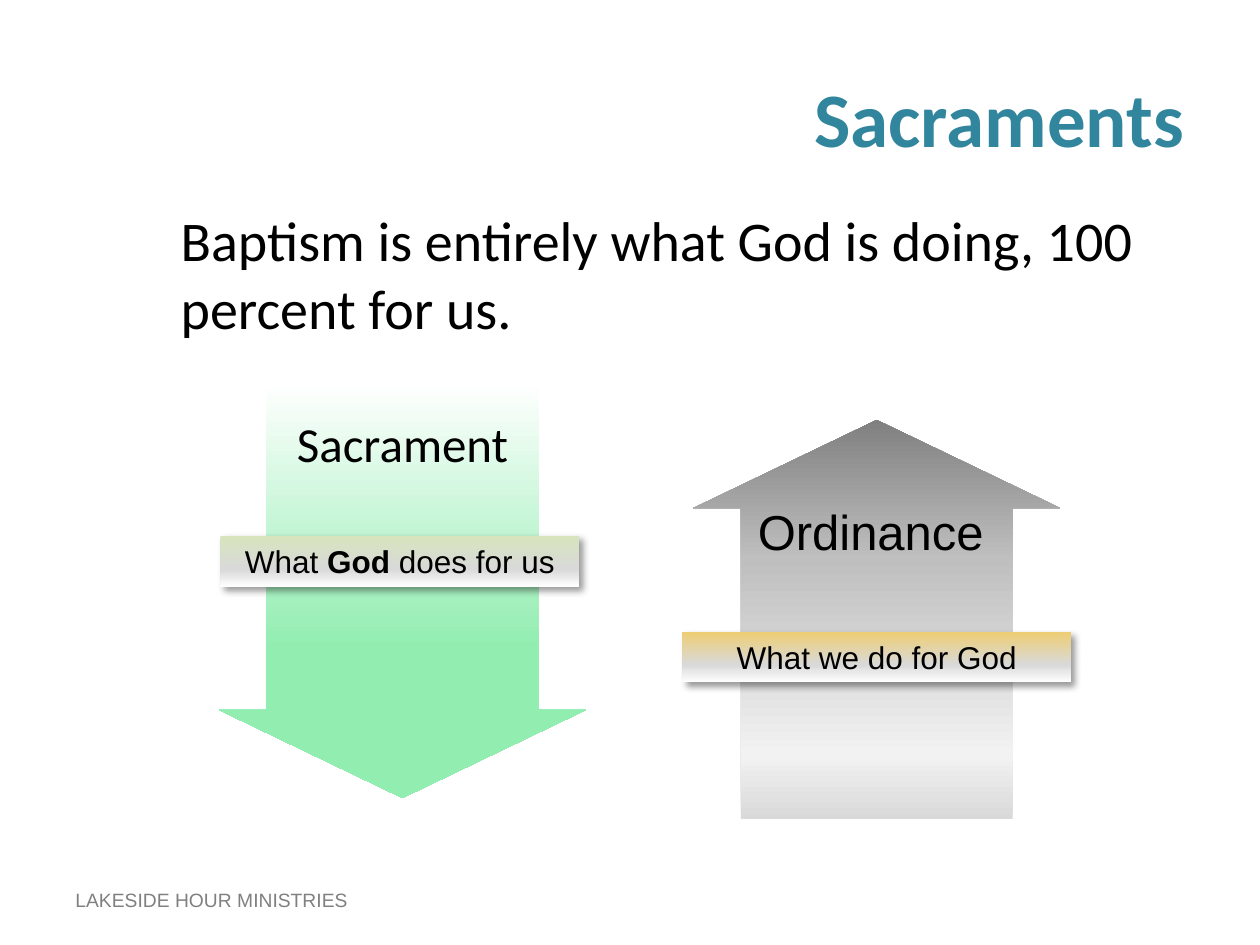
from dataclasses import dataclass

from lxml import etree
from pptx import Presentation
from pptx import util as u
from pptx.dml.color import RGBColor
from pptx.enum import shapes, text
from pptx.oxml.ns import qn


@dataclass(frozen=True)
class Theme:
    """Colours, fonts and type sizes of the slide."""

    heading_font: str = "Calibri"
    label_font: str = "Arial"
    title_size: float = 44
    body_size: float = 32
    heading_size: float = 28
    bar_size: float = 18
    footer_size: float = 11
    teal: str = "31859C"
    black: str = "000000"
    gray: str = "808080"
    white: str = "FFFFFF"
    sacrament_arrow: tuple = ((0, "11D9B8"), (1, "FFFFFF"), (65, "91EDB0"))
    ordinance_arrow: tuple = ((0, "D9D9D9"), (16, "F2F2F2"), (65, "BFBFBF"), (100, "808080"))
    sacrament_bar: tuple = ((0, "D7E4BD"), (65, "D9D9D9"), (100, "FFFFFF"))
    ordinance_bar: tuple = ((0, "EECE72"), (65, "D9D9D9"), (100, "FFFFFF"))


class SlideBuilder:
    """Adds styled elements to the current slide."""

    def __init__(self, slide, theme):
        """Keep the slide and its theme."""
        self.slide = slide
        self.theme = theme

    def place(self, shape, box):
        """Move and size a shape with a box given in points."""
        shape.left, shape.top, shape.width, shape.height = (u.Pt(value) for value in box)

    def set_text(self, shape, parts, font, size, color, align=text.PP_ALIGN.LEFT):
        """Set one paragraph of (words, bold) parts."""
        shape.text_frame.word_wrap = True
        paragraph = shape.text_frame.paragraphs[0]
        paragraph.alignment = align
        paragraph.space_before = u.Pt(0)
        for words, bold in parts:
            run = paragraph.add_run()
            run.text = words
            run.font.name = font
            run.font.size = u.Pt(size)
            run.font.bold = bold
            run.font.color.rgb = RGBColor.from_string(color)

    def title(self, words, box):
        """Fill the title placeholder."""
        shape = self.slide.shapes.title
        self.place(shape, box)
        self.set_text(shape, [(words, True)], self.theme.heading_font, self.theme.title_size,
                      self.theme.teal, text.PP_ALIGN.RIGHT)

    def body(self, words, box):
        """Fill the body placeholder with an unbulleted paragraph."""
        shape = self.slide.placeholders[1]
        self.place(shape, box)
        properties = shape.text_frame.paragraphs[0]._p.get_or_add_pPr()
        properties.set("marL", "0")
        properties.set("indent", "0")
        etree.SubElement(properties, qn("a:buNone"))
        self.set_text(shape, [(words, False)], self.theme.heading_font, self.theme.body_size,
                      self.theme.black)

    def label(self, words, box, font, size, color, align=text.PP_ALIGN.LEFT):
        """Add a text box."""
        shape = self.slide.shapes.add_textbox(*(u.Pt(value) for value in box))
        self.set_text(shape, [(words, False)], font, size, color, align)

    def preset(self, kind, box):
        """Add a preset shape without line or shadow."""
        shape = self.slide.shapes.add_shape(kind, *(u.Pt(value) for value in box))
        shape.shadow.inherit = False
        shape.line.fill.background()
        return shape

    def gradient(self, shape, stops):
        """Fill a shape from top to bottom with (percent, colour) stops."""
        shape.fill.gradient()
        shape.fill.gradient_angle = 270
        stop_list = shape._element.spPr.find(".//" + qn("a:gsLst"))
        for stop in list(stop_list):
            stop_list.remove(stop)
        for percent, color in stops:
            stop = etree.SubElement(stop_list, qn("a:gs"), pos=str(percent * 1000))
            etree.SubElement(stop, qn("a:srgbClr"), val=color)

    def arrow(self, box, stops, rotation=0):
        """Add a block arrow that points down before rotation."""
        shape = self.preset(shapes.MSO_SHAPE.DOWN_ARROW, box)
        shape.adjustments[0] = 0.74
        shape.adjustments[1] = 0.24
        shape.rotation = rotation
        self.gradient(shape, stops)

    def bar(self, parts, box, stops):
        """Add a shadowed caption bar."""
        shape = self.preset(shapes.MSO_SHAPE.RECTANGLE, box)
        self.gradient(shape, stops)
        effects = shape._element.spPr.find(qn("a:effectLst"))
        shadow = etree.SubElement(effects, qn("a:outerShdw"), blurRad=str(u.Pt(4)),
                                  dist=str(u.Pt(3)), dir="2700000", algn="tl", rotWithShape="0")
        color = etree.SubElement(shadow, qn("a:srgbClr"), val=self.theme.black)
        etree.SubElement(color, qn("a:alpha"), val="40000")
        self.set_text(shape, parts, self.theme.label_font, self.theme.bar_size,
                      self.theme.black, text.PP_ALIGN.CENTER)

    def mask(self, box):
        """Add a plain rectangle in the background colour."""
        shape = self.preset(shapes.MSO_SHAPE.RECTANGLE, box)
        shape.fill.solid()
        shape.fill.fore_color.rgb = RGBColor.from_string(self.theme.white)


def main():
    """Build and save the slide."""
    presentation = Presentation()
    presentation.slide_width, presentation.slide_height = u.Pt(720), u.Pt(540)
    theme = Theme()
    builder = SlideBuilder(presentation.slides.add_slide(presentation.slide_layouts[1]), theme)

    builder.label("LAKESIDE HOUR MINISTRIES", (36, 504, 198, 21), theme.label_font,
                  theme.footer_size, theme.gray)
    builder.title("Sacraments", (36, 21.6, 648, 90))
    builder.body("Baptism is entirely what God is doing, 100 percent for us.", (96, 114, 588, 102))

    builder.arrow((396, 240, 210, 228), theme.ordinance_arrow, 180)
    builder.bar([("What we do for God", False)], (390, 361, 222, 29), theme.ordinance_bar)
    builder.arrow((125, 216, 210, 240), theme.sacrament_arrow)
    builder.bar([("What ", False), ("God", True), (" does for us", False)],
                (126, 306, 205, 29.5), theme.sacrament_bar)

    builder.label("Sacrament", (155, 233, 150, 41), theme.heading_font,
                  theme.heading_size, theme.black, text.PP_ALIGN.CENTER)
    builder.label("Ordinance", (426, 283, 144, 41), theme.label_font,
                  theme.heading_size, theme.black)
    builder.mask((150, 210, 162, 12))
    presentation.save("out.pptx")


if __name__ == "__main__":
    main()
